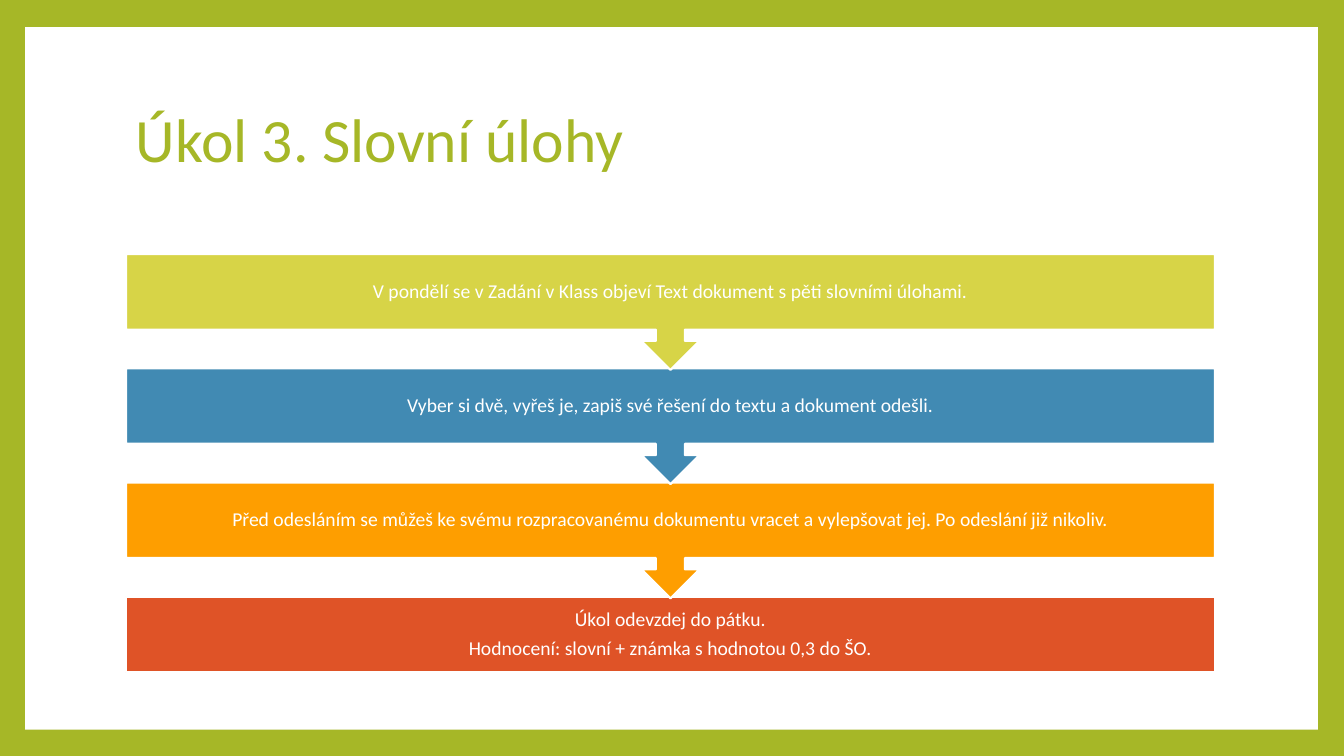
from pptx import Presentation
from pptx.dml.color import RGBColor
from pptx.enum.shapes import MSO_SHAPE
from pptx.enum.text import MSO_ANCHOR, PP_ALIGN
from pptx.util import Inches, Pt

RECTANGLE = MSO_SHAPE.RECTANGLE
CALLOUT = MSO_SHAPE.DOWN_ARROW_CALLOUT
MIDDLE = MSO_ANCHOR.MIDDLE
LEFT, CENTER = PP_ALIGN.LEFT, PP_ALIGN.CENTER

TITLE = "Úkol 3. Slovní úlohy"
STEPS = [
    ("D7D447", ["V pondělí se v Zadání v Klass objeví Text dokument s pěti slovními úlohami."]),
    ("418AB3", ["Vyber si dvě, vyřeš je, zapiš své řešení do textu a dokument odešli."]),
    ("FE9E00", ["Před odesláním se můžeš ke svému rozpracovanému dokumentu vracet "
                "a vylepšovat jej. Po odeslání již nikoliv."]),
    ("DF5327", ["Úkol odevzdej do pátku.", "Hodnocení: slovní + známka s hodnotou 0,3 do ŠO."]),
]
GREEN, WHITE, FONT = "A6B727", "FFFFFF", "Calibri"
WIDTH, HEIGHT = 13.33, 7.5
COLUMN_LEFT, COLUMN_WIDTH = 1.25, 10.8
FIRST_TOP, LAST_TOP = 2.52, 5.92
BOX_HEIGHT, CALLOUT_HEIGHT = 0.75, 1.15
ROW_PITCH = (LAST_TOP - FIRST_TOP) / (len(STEPS) - 1)


def color(value):
    return RGBColor.from_string(value)


def add_block(slide, kind, box, fill):
    shape = slide.shapes.add_shape(kind, *map(Inches, box))
    shape.shadow.inherit = False
    shape.fill.solid()
    shape.fill.fore_color.rgb = color(fill)
    shape.line.fill.background()
    return shape


def write_text(shape, lines, size, text_color, alignment):
    frame = shape.text_frame
    frame.word_wrap = True
    frame.vertical_anchor = MIDDLE
    frame.text = "\n".join(lines)
    for paragraph in frame.paragraphs:
        paragraph.alignment = alignment
        paragraph.line_spacing = 0.9
        for run in paragraph.runs:
            run.font.size = Pt(size)
            run.font.name = FONT
            run.font.color.rgb = color(text_color)


def add_step(slide, row, fill, lines):
    is_last = row == len(STEPS) - 1
    kind, height = (RECTANGLE, BOX_HEIGHT) if is_last else (CALLOUT, CALLOUT_HEIGHT)
    top = FIRST_TOP + row * ROW_PITCH
    shape = add_block(slide, kind, (COLUMN_LEFT, top, COLUMN_WIDTH, height), fill)
    if not is_last:
        shape.adjustments[3] = BOX_HEIGHT / CALLOUT_HEIGHT
    shape.line.color.rgb = color(WHITE)
    shape.line.width = Pt(1.5)
    write_text(shape, lines, 14, WHITE, CENTER)
    frame = shape.text_frame
    frame.margin_left = frame.margin_right = Inches(0.11)
    frame.margin_top = frame.margin_bottom = Inches(0.11)
    for paragraph in frame.paragraphs:
        paragraph.space_after = Pt(5)


def main():
    presentation = Presentation()
    presentation.slide_width, presentation.slide_height = Inches(WIDTH), Inches(HEIGHT)
    slide = presentation.slides.add_slide(presentation.slide_layouts[6])
    slide.background.fill.solid()
    slide.background.fill.fore_color.rgb = color(GREEN)
    add_block(slide, RECTANGLE, (0.25, 0.27, 12.82, 6.97), WHITE)

    title_box = (COLUMN_LEFT, 0.67, COLUMN_WIDTH, 1.48)
    title = slide.shapes.add_textbox(*map(Inches, title_box))
    write_text(title, [TITLE], 44, GREEN, LEFT)

    for row, (fill, lines) in reversed(list(enumerate(STEPS))):
        add_step(slide, row, fill, lines)
    presentation.save("out.pptx")


if __name__ == "__main__":
    main()
